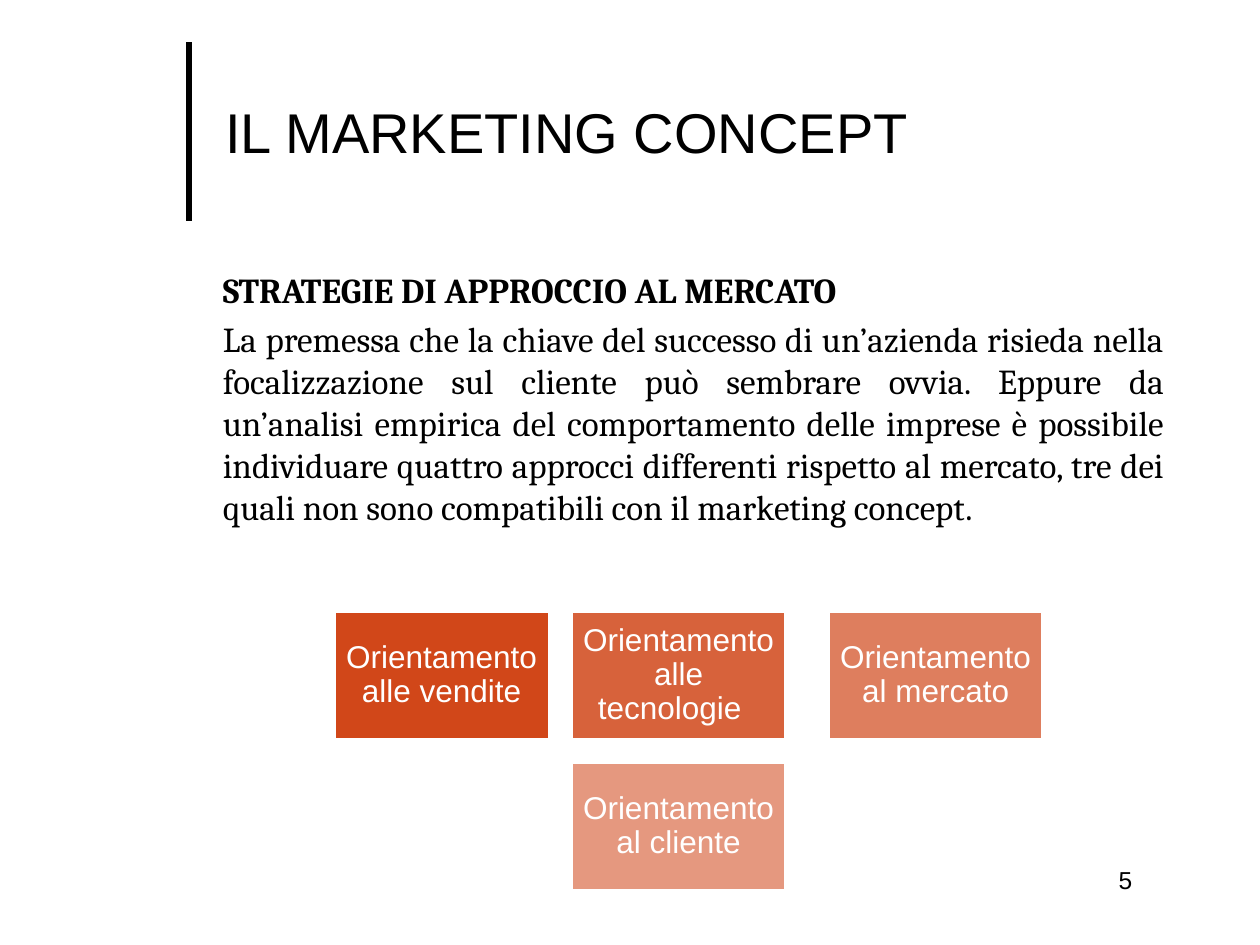
from dataclasses import dataclass

from lxml import etree
from pptx import Presentation
from pptx.dml.color import RGBColor
from pptx.enum.shapes import MSO_CONNECTOR, MSO_SHAPE
from pptx.enum.text import MSO_ANCHOR, PP_ALIGN
from pptx.oxml.ns import qn
from pptx.util import Inches, Pt

STRAIGHT = MSO_CONNECTOR.STRAIGHT
RECTANGLE = MSO_SHAPE.RECTANGLE
MIDDLE, TOP = MSO_ANCHOR.MIDDLE, MSO_ANCHOR.TOP
LEFT, CENTER, JUSTIFY = PP_ALIGN.LEFT, PP_ALIGN.CENTER, PP_ALIGN.JUSTIFY


@dataclass(frozen=True)
class Theme:
    ink: RGBColor = RGBColor(0x00, 0x00, 0x00)
    paper: RGBColor = RGBColor(0xFF, 0xFF, 0xFF)
    accent: RGBColor = RGBColor(0xCC, 0x33, 0x00)
    sans: str = "Arial"
    serif: str = "Cambria"
    title: int = 32
    body: int = 20
    card: int = 18
    number: int = 14


theme = Theme()


def style(paragraph, font, size, color, align=LEFT, bold=False):
    paragraph.alignment = align
    paragraph.font.name = font
    paragraph.font.size = Pt(size)
    paragraph.font.color.rgb = color
    paragraph.font.bold = bold


def add_text_frame(left, top, width, height, anchor=TOP):
    box = slide.shapes.add_textbox(Inches(left), Inches(top), Inches(width), Inches(height))
    box.text_frame.word_wrap = True
    box.text_frame.vertical_anchor = anchor
    return box.text_frame


prs = Presentation()
prs.slide_width, prs.slide_height = Inches(10), Inches(7.5)
slide = prs.slides.add_slide(prs.slide_layouts[6])

# Vertical rule beside the title
rule = slide.shapes.add_connector(STRAIGHT, Inches(1.5), Inches(1.75), Inches(1.5), Inches(0.33))
rule.line.color.rgb = theme.ink
rule.line.width = Pt(3)
etree.SubElement(rule._element.spPr, qn("a:effectLst"))

# Title
title = add_text_frame(1.69, 0.6, 9, 0.88, MIDDLE)
title.text = "IL MARKETING CONCEPT"
style(title.paragraphs[0], theme.sans, theme.title, theme.ink)

# Heading and body text
body = add_text_frame(1.67, 2.08, 7.67, 4.9)
heading = body.paragraphs[0]
heading.text = "STRATEGIE DI APPROCCIO AL MERCATO"
style(heading, theme.serif, theme.body, theme.ink, JUSTIFY, bold=True)
premise = body.add_paragraph()
premise.text = (
    "La premessa che la chiave del successo di un’azienda risieda nella "
    "focalizzazione sul cliente può sembrare ovvia. Eppure da un’analisi "
    "empirica del comportamento delle imprese è possibile individuare quattro "
    "approcci differenti rispetto al mercato, tre dei quali non sono "
    "compatibili con il marketing concept."
)
premise.space_before = Pt(4)
style(premise, theme.serif, theme.body, theme.ink, JUSTIFY)

# Four market orientations, fading from first to last: text, left, top, opacity %
orientations = [
    ("Orientamento alle vendite", 2.65, 4.85, 90),
    ("Orientamento alle tecnologie  ", 4.53, 4.85, 77),
    ("Orientamento al mercato", 6.57, 4.85, 63),
    ("Orientamento al cliente", 4.53, 6.05, 50),
]
for label, left, top, opacity in orientations:
    card = slide.shapes.add_shape(RECTANGLE, Inches(left), Inches(top), Inches(1.71), Inches(1.02))
    card.shadow.inherit = False
    card.fill.solid()
    card.fill.fore_color.rgb = theme.accent
    accent = card._element.spPr.find(qn("a:solidFill")).find(qn("a:srgbClr"))
    etree.SubElement(accent, qn("a:alpha"), val=str(opacity * 1000))
    card.line.color.rgb = theme.paper
    card.line.width = Pt(2)

    frame = card.text_frame
    frame.word_wrap = True
    frame.vertical_anchor = MIDDLE
    frame.margin_left = frame.margin_right = Inches(0.07)
    frame.margin_top = frame.margin_bottom = Inches(0.07)
    frame.text = label
    frame.paragraphs[0].line_spacing = 0.9
    style(frame.paragraphs[0], theme.sans, theme.card, theme.paper, CENTER)

# Slide number
number = add_text_frame(8.78, 6.82, 1.42, 0.5)
number.text = "5"
style(number.paragraphs[0], theme.sans, theme.number, theme.ink)

prs.save("out.pptx")
